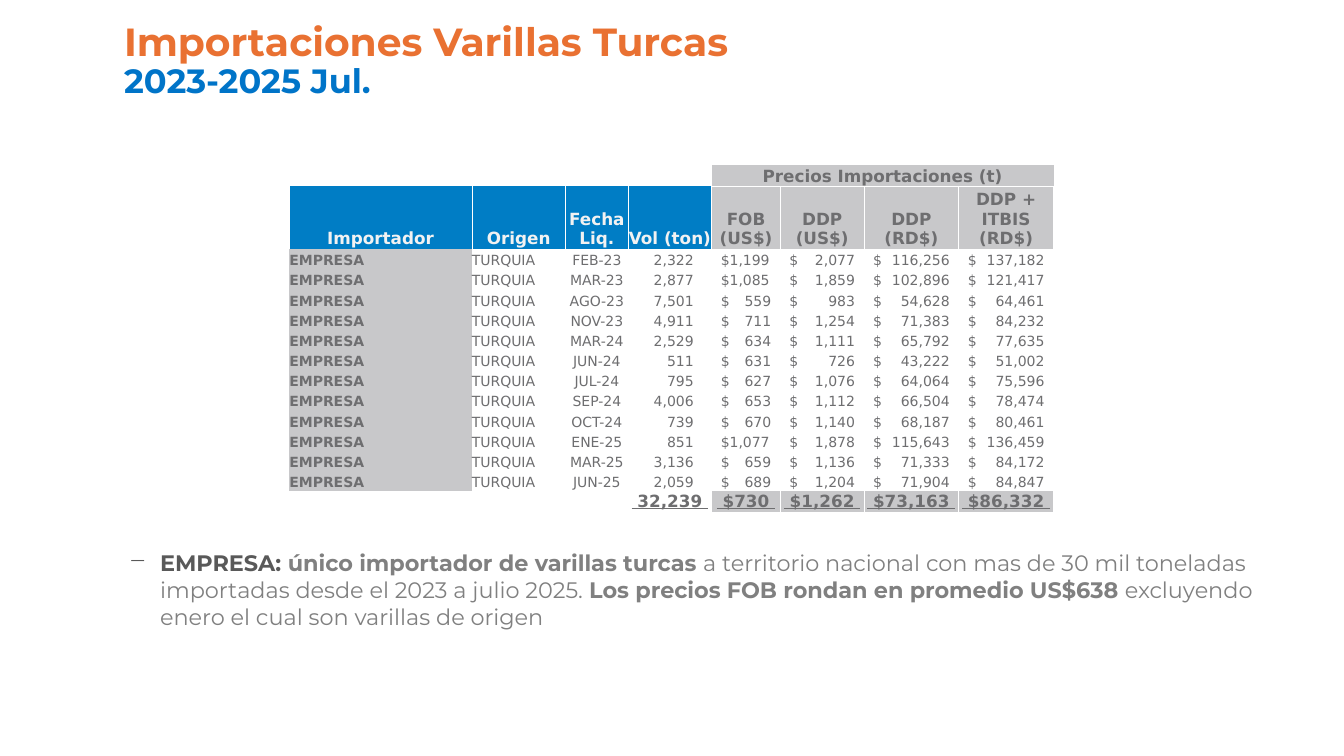
from lxml import etree
from pptx import Presentation
from pptx.dml.color import RGBColor
from pptx.enum import text
from pptx.oxml import ns
from pptx.util import Inches, Pt

# Content
IMPORTER, ORIGIN = "EMPRESA", "TURQUIA"
TITLE = [("Importaciones Varillas Turcas", 28, "E97132"),
         ("2023-2025 Jul.", 24, "0074C8")]
GROUP_HEADER = "Precios Importaciones (t)"
HEADERS = ["Importador", "Origen", "Fecha Liq.", "Vol (ton)",
           "FOB\n(US$)", "DDP\n(US$)", "DDP\n(RD$)", "DDP + ITBIS\n(RD$)"]
# Date, volume, FOB US$, DDP US$, DDP RD$, DDP + ITBIS RD$
IMPORTS = [
    ("FEB-23", 2322, 1199, 2077, 116256, 137182),
    ("MAR-23", 2877, 1085, 1859, 102896, 121417),
    ("AGO-23", 7501, 559, 983, 54628, 64461),
    ("NOV-23", 4911, 711, 1254, 71383, 84232),
    ("MAR-24", 2529, 634, 1111, 65792, 77635),
    ("JUN-24", 511, 631, 726, 43222, 51002),
    ("JUL-24", 795, 627, 1076, 64064, 75596),
    ("SEP-24", 4006, 653, 1112, 66504, 78474),
    ("OCT-24", 739, 670, 1140, 68187, 80461),
    ("ENE-25", 851, 1077, 1878, 115643, 136459),
    ("MAR-25", 3136, 659, 1136, 71333, 84172),
    ("JUN-25", 2059, 689, 1204, 71904, 84847),
]
TOTALS = ["", "", "", " 32,239 ", " $730 ", " $1,262 ", " $73,163 ", " $86,332 "]
NOTE = [
    (f"{IMPORTER}: ", True, "595959"),
    ("único importador de varillas turcas ", True, "808080"),
    ("a territorio nacional con mas de 30 mil toneladas importadas "
     "desde el 2023 a julio 2025. ", False, "808080"),
    ("Los precios FOB rondan en promedio US$638 ", True, "808080"),
    ("excluyendo enero el cual son varillas de origen", False, "808080"),
]

# Layout and palette
COLUMN_WIDTHS = [1.81, 0.93, 0.62, 0.83, 0.68, 0.83, 0.94, 0.94]
ROW_HEIGHTS = [0.21, 0.62] + [0.2] * len(IMPORTS) + [0.21]
FIRST_PRICE = 4
PRICE_INSET = 0.09
BLUE, GREY, TEXT_GREY, PALE, WHITE = "007DC5", "C8C8CA", "6E6E70", "F2F2F2", "FFFFFF"
LEFT, CENTER, RIGHT = text.PP_ALIGN.LEFT, text.PP_ALIGN.CENTER, text.PP_ALIGN.RIGHT
PLAIN_TABLE_STYLE = "{2D5ABB26-0587-4C30-8999-92F81FD0307C}"


def color(value):
    return RGBColor.from_string(value)


def add_xml(parent, tag, **attributes):
    return etree.SubElement(parent, ns.qn(tag), attributes)


def format_run(run, font, size, value, bold):
    run.font.name, run.font.size, run.font.bold = font, Pt(size), bold
    run.font.color.rgb = color(value)


def fill_cell(cell, words="", size=10, value=TEXT_GREY, bold=False, underline=False,
              align=CENTER, fill=None, borders="", left=0, right=0, tab=None):
    cell.margin_left, cell.margin_right = Inches(left), Inches(right)
    cell.margin_top = cell.margin_bottom = 0
    cell.vertical_anchor = text.MSO_ANCHOR.BOTTOM
    paragraph = cell.text_frame.paragraphs[0]
    paragraph.text = words
    paragraph.alignment = align
    for run in paragraph.runs:
        format_run(run, "DejaVu Sans", size, value, bold)
        run.font.underline = underline
    if not words:
        add_xml(paragraph._p, "a:endParaRPr", sz=str(size * 100))
    if tab:
        stops = add_xml(paragraph._p.get_or_add_pPr(), "a:tabLst")
        add_xml(stops, "a:tab", pos=str(Inches(tab)), algn="r")
    # White separators, in the order L, R, T, B
    for side in borders:
        line = add_xml(cell._tc.get_or_add_tcPr(), f"a:ln{side}", w=str(Pt(0.5)))
        add_xml(add_xml(line, "a:solidFill"), "a:srgbClr", val=WHITE)
    if fill:
        cell.fill.solid()
        cell.fill.fore_color.rgb = color(fill)
    else:
        cell.fill.background()


def add_title(slide):
    title = slide.shapes.title
    title.left, title.top = Inches(1.13), Inches(0.17)
    title.width, title.height = Inches(9.94), Inches(1.15)
    frame = title.text_frame
    frame.text = "\n".join(words for words, _, _ in TITLE)
    frame.vertical_anchor = text.MSO_ANCHOR.TOP
    frame.auto_size = text.MSO_AUTO_SIZE.NONE
    for paragraph, (_, size, value) in zip(frame.paragraphs, TITLE):
        paragraph.alignment, paragraph.line_spacing = LEFT, 0.9
        paragraph.space_before = Pt(0)
        format_run(paragraph.runs[0], "Montserrat", size, value, True)


def add_imports_table(slide):
    frame = slide.shapes.add_table(
        len(ROW_HEIGHTS), len(COLUMN_WIDTHS), Inches(2.87), Inches(1.64),
        Inches(sum(COLUMN_WIDTHS)), Inches(sum(ROW_HEIGHTS)))
    table = frame.table
    table.first_row = table.horz_banding = False
    table._tbl.tblPr.find(ns.qn("a:tableStyleId")).text = PLAIN_TABLE_STYLE
    for column, width in zip(table.columns, COLUMN_WIDTHS):
        column.width = Inches(width)
    for row, height in zip(table.rows, ROW_HEIGHTS):
        row.height = Inches(height)

    # Header and total rows
    last_row, last_column = len(ROW_HEIGHTS) - 1, len(COLUMN_WIDTHS) - 1
    for index, (header, total) in enumerate(zip(HEADERS, TOTALS)):
        is_price = index >= FIRST_PRICE
        words = GROUP_HEADER if index == FIRST_PRICE else ""
        fill_cell(table.cell(0, index), words, 12, bold=True,
                  fill=GREY if is_price else None, borders="B" if is_price else "")
        fill_cell(table.cell(1, index), header, 12, TEXT_GREY if is_price else PALE,
                  bold=True, fill=GREY if is_price else BLUE,
                  borders="LRT" if is_price else "LR")
        fill_cell(table.cell(last_row, index), total, 12 if total else 10, bold=True,
                  underline=True, fill=GREY if is_price else None,
                  borders="LR" if is_price else "")
    table.cell(0, FIRST_PRICE).merge(table.cell(0, last_column))

    # One row per import
    for row, (date, volume, *prices) in enumerate(IMPORTS, 2):
        fill_cell(table.cell(row, 0), IMPORTER, bold=True, align=LEFT, fill=GREY)
        fill_cell(table.cell(row, 1), ORIGIN, align=LEFT)
        fill_cell(table.cell(row, 2), date)
        fill_cell(table.cell(row, 3), f"{volume:,}", align=RIGHT, right=0.18)
        for index, price in enumerate(prices, FIRST_PRICE):
            fills_column = index == FIRST_PRICE and price >= 1000
            gap = "" if fills_column else "\t"
            fill_cell(table.cell(row, index), f"${gap}{price:,}", align=LEFT,
                      left=PRICE_INSET, tab=COLUMN_WIDTHS[index] - 2 * PRICE_INSET)


def add_note(slide):
    box = slide.shapes.add_textbox(Inches(1.18), Inches(5.4), Inches(11.7), Inches(1.45))
    box.text_frame.word_wrap = True
    paragraph = box.text_frame.paragraphs[0]
    properties = paragraph._p.get_or_add_pPr()
    properties.set("marL", str(Inches(0.31)))
    properties.set("indent", str(-Inches(0.31)))
    add_xml(properties, "a:buChar", char="−")
    for words, bold, value in NOTE:
        run = paragraph.add_run()
        run.text = words
        format_run(run, "Montserrat", 16, value, bold)


def main():
    presentation = Presentation()
    presentation.slide_width, presentation.slide_height = Inches(13.33), Inches(7.5)
    slide = presentation.slides.add_slide(presentation.slide_layouts[5])
    add_title(slide)
    add_imports_table(slide)
    add_note(slide)
    presentation.save("out.pptx")


if __name__ == "__main__":
    main()
